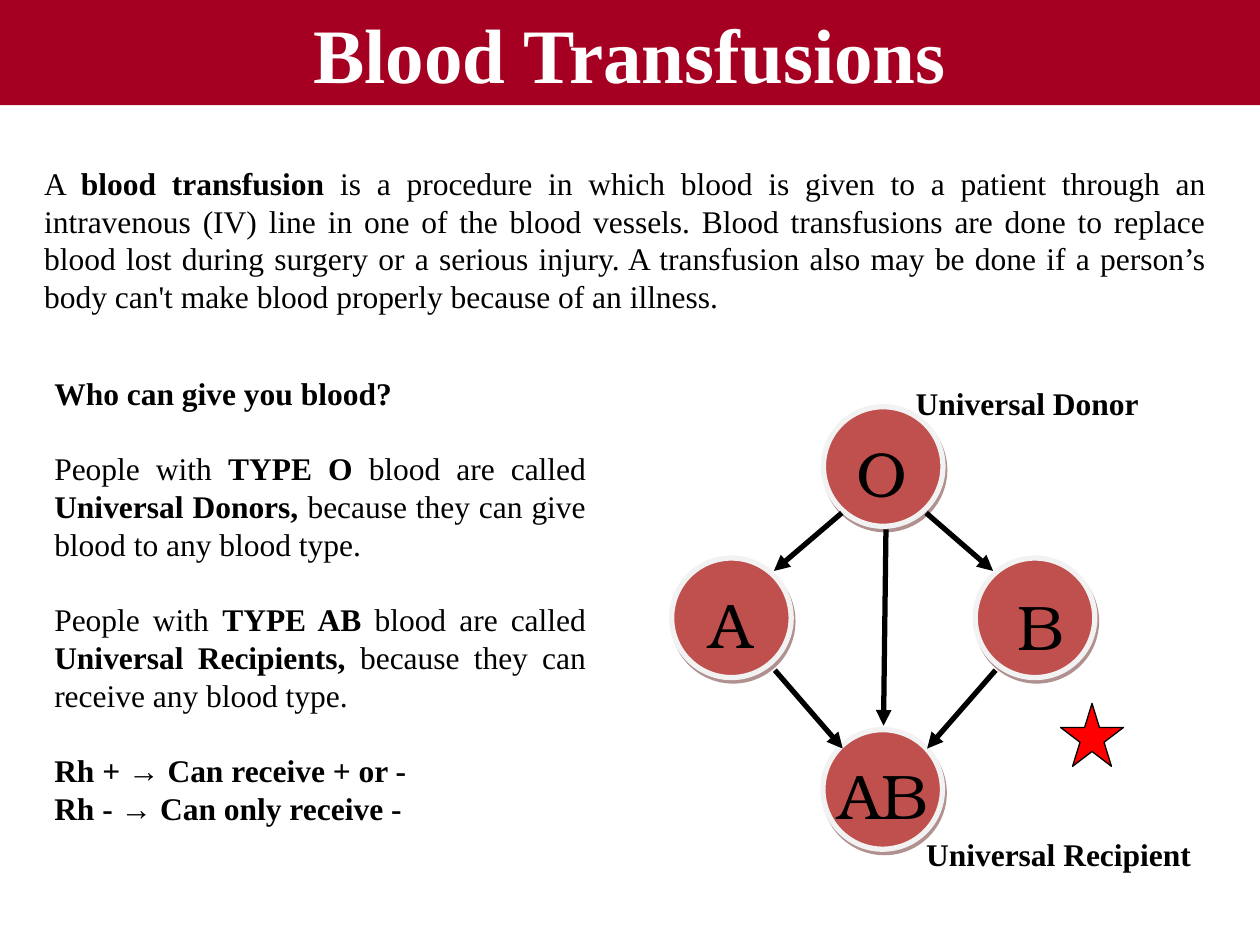
from lxml.etree import SubElement as Sub
from pptx import Presentation
from pptx.dml.color import RGBColor
from pptx.enum.shapes import MSO_CONNECTOR as Link, MSO_SHAPE as Form
from pptx.enum.text import MSO_ANCHOR as Anchor, MSO_AUTO_SIZE as Fit, PP_ALIGN as Align
from pptx.oxml.ns import qn
from pptx.util import Cm, Pt


def paint(target, color):
    if hasattr(target, "solid"):
        target.solid()
        target.fore_color.rgb = RGBColor.from_string(color)
    else:
        target.rgb = RGBColor.from_string(color)


def write(para, text, size=18, color="000000", font="Times New Roman", align=Align.LEFT):
    para.alignment = align
    para.font.size = Pt(size)
    para.font.name = font
    paint(para.font.color, color)
    for i, part in enumerate(text.split("*")):
        if part:
            run = para.add_run()
            run.text = part
            run.font.bold = i % 2 == 1


deck = Presentation()
deck.slide_width, deck.slide_height = Cm(25.4), Cm(19.05)
slide = deck.slides.add_slide(deck.slide_layouts[1])
shapes = slide.shapes

title, body = slide.placeholders
title.left, title.top, title.width, title.height = Cm(0), Cm(0), Cm(25.4), Cm(2.12)
paint(title.fill, "A50021")
title.text_frame.auto_size = Fit.NONE
title.text_frame.vertical_anchor = Anchor.MIDDLE
write(title.text_frame.paragraphs[0], "*Blood Transfusions*", 44, "FFFFFF", align=Align.CENTER)

body.left, body.top, body.width, body.height = Cm(0.84), Cm(7.42), Cm(11.23), Cm(9.5)
frame = body.text_frame
frame.auto_size = Fit.NONE
lines = [
    ("*Who can give you blood?*", 0, Align.JUSTIFY),
    ("People with *TYPE O *blood are called *Universal Donors, *"
     "because they can give blood to any blood type.", 21.3, Align.JUSTIFY),
    ("People with *TYPE AB *blood are called *Universal Recipients, *"
     "because they can receive any blood type.", 21.3, Align.JUSTIFY),
    ("*Rh + → Can receive + or -*", 21.3, Align.LEFT),
    ("*Rh - → Can only receive -*", 0, Align.LEFT),
]
for i, (text, gap, align) in enumerate(lines):
    para = frame.add_paragraph() if i else frame.paragraphs[0]
    para.space_before = Pt(gap)
    write(para, text, align=align)
    props = para._p.get_or_add_pPr()
    props.set("marL", "0")
    props.set("indent", "0")
    props.insert_element_before(props.makeelement(qn("a:buNone")), "a:tabLst", "a:defRPr")

intro = (
    "A *blood transfusion *is a procedure in which blood is given to a patient through an "
    "intravenous (IV) line in one of the blood vessels. Blood transfusions are done to replace "
    "blood lost during surgery or a serious injury. A transfusion also may be done if a person’s "
    "body can't make blood properly because of an illness."
)
notes = [
    (intro, 0.64, 3.18, 23.93, 4.11, Align.JUSTIFY),
    ("*Universal Donor*", 18.21, 7.62, 5.51, 1.07, Align.LEFT),
    ("*Universal Recipient*", 18.42, 16.71, 5.92, 1.02, Align.LEFT),
]

size = 2.41
types = [
    ("A", 13.54, 11.25, 14.74, 11.68, 0),
    ("B", 19.66, 11.25, 20.98, 11.71, 0),
    ("O", 16.6, 8.2, 17.8, 8.64, 6.1),
    ("AB", 16.59, 14.71, 17.8, 15.12, 0),
]
for name, x, y, mid, top, turn in types:
    disc = shapes.add_shape(Form.OVAL, Cm(x), Cm(y), Cm(size), Cm(size))
    paint(disc.fill, "C0504D")
    paint(disc.line.fill, "F2F2F2")
    disc.line.width = Pt(3)
    disc.shadow.inherit = False
    glow = disc._element.spPr.find(qn("a:effectLst"))
    shade = Sub(glow, qn("a:outerShdw"), dist=str(Pt(2.2)), dir=str(63 * 60000),
                algn="ctr", rotWithShape="0")
    tint = Sub(shade, qn("a:srgbClr"), val="622423")
    Sub(tint, qn("a:alpha"), val="50000")

    label = shapes.add_textbox(Cm(mid - size / 2), Cm(top), Cm(size), Cm(1.47))
    label.rotation = turn
    frame = label.text_frame
    frame.word_wrap = True
    frame.margin_left = frame.margin_right = Cm(0)
    write(frame.paragraphs[0], name, 36, font="TeX Gyre Bonum", align=Align.CENTER)

arrows = [
    (17.86, 10.67, 17.81, 14.63),
    (16.97, 10.34, 15.6, 11.51),
    (18.67, 10.34, 20.02, 11.51),
    (15.62, 13.51, 16.99, 15.09),
    (20.07, 13.51, 18.69, 15.09),
]
for ends in arrows:
    arrow = shapes.add_connector(Link.STRAIGHT, *map(Cm, ends))
    paint(arrow.line.fill, "000000")
    arrow.line.width = Pt(3)
    Sub(arrow.line._get_or_add_ln(), qn("a:tailEnd"), type="triangle")
    Sub(arrow._element.spPr, qn("a:effectLst"))

for text, x, y, wide, high, align in notes:
    note = shapes.add_textbox(Cm(x), Cm(y), Cm(wide), Cm(high))
    note.text_frame.word_wrap = True
    write(note.text_frame.paragraphs[0], text, align=align)

star = shapes.add_shape(Form.STAR_5_POINT, Cm(21.38), Cm(14.18), Cm(1.27), Cm(1.27))
star.shadow.inherit = False
paint(star.fill, "FF0000")
paint(star.line.fill, "000000")
star.line.width = Pt(0.75)

deck.save("out.pptx")
